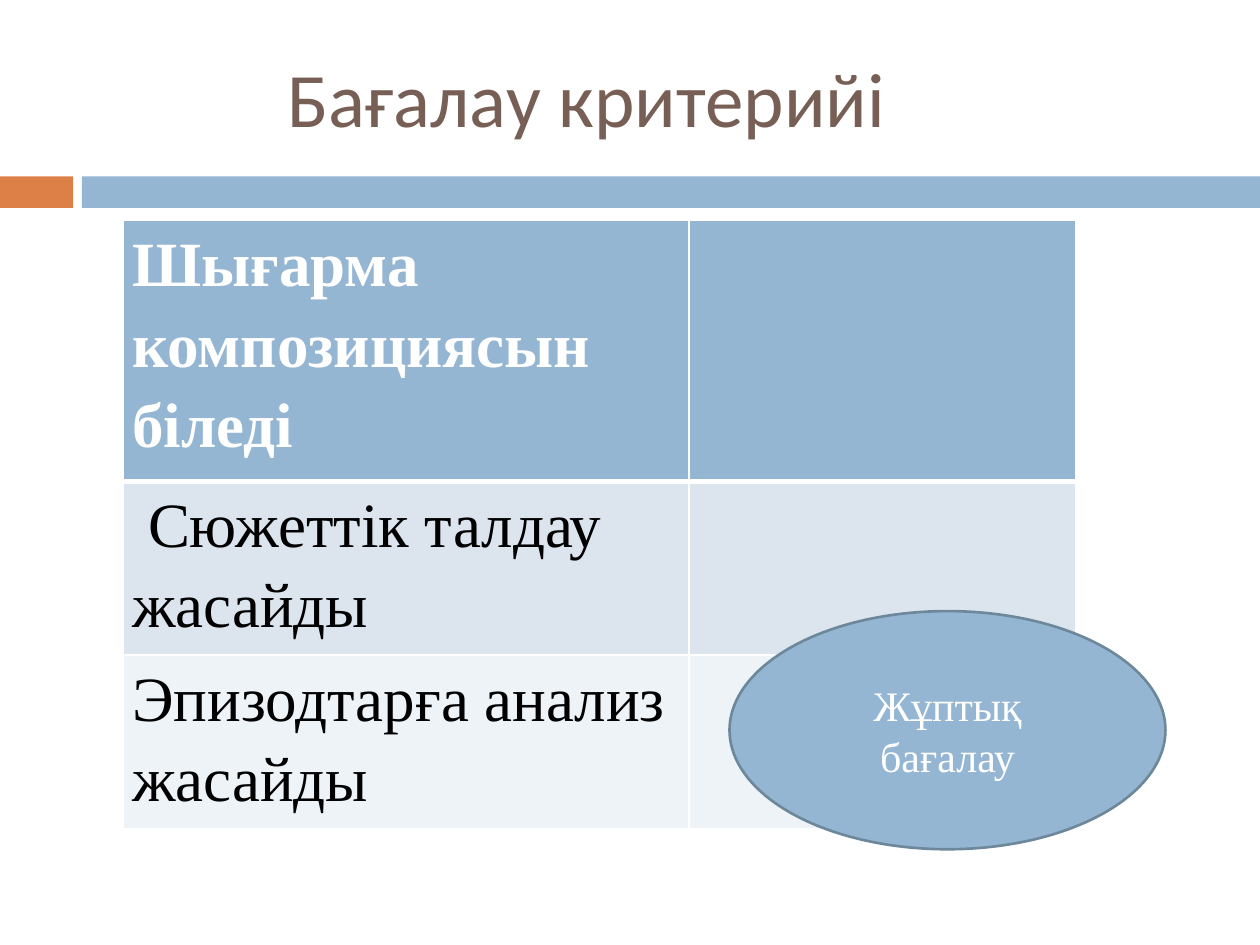
from lxml.etree import SubElement
from pptx import Presentation
from pptx.dml.color import RGBColor
from pptx.enum.shapes import MSO_SHAPE
from pptx.enum.text import MSO_ANCHOR, PP_ALIGN
from pptx.oxml.ns import qn
from pptx.util import Inches, Pt

BLUE, ORANGE, BROWN = "94B6D2", "DD8047", "775F55"
WHITE, BLACK, OUTLINE = "FFFFFF", "000000", "6D879B"
BAND_DARK, BAND_LIGHT = "DCE5EE", "EEF3F7"
SERIF, SANS = "Times New Roman", "Calibri"


def color(hex_string):
    return RGBColor.from_string(hex_string)


def write(frame, text, size=24, font=SERIF, fill=WHITE, bold=False,
          align=PP_ALIGN.LEFT, spacing=None):
    frame.word_wrap = True
    para = frame.paragraphs[0]
    para.alignment = align
    if spacing:
        para.line_spacing = spacing
    span = para.add_run()
    span.text = text
    span.font.size = Pt(size)
    span.font.name = font
    span.font.bold = bold
    span.font.color.rgb = color(fill)


def set_borders(cell, bottom_width):
    properties = cell._tc.get_or_add_tcPr()
    widths = {"a:lnL": 1, "a:lnR": 1, "a:lnT": 1, "a:lnB": bottom_width}
    for position, (side, width) in enumerate(widths.items()):
        line = SubElement(properties, qn(side), w=str(Pt(width)))
        solid = SubElement(line, qn("a:solidFill"))
        SubElement(solid, qn("a:srgbClr"), val=WHITE)
        properties.insert(position, line)


class SlideBuilder:
    def __init__(self, page):
        self.page = page

    def shape(self, kind, left, top, width, height, fill, outline=None):
        shape = self.page.shapes.add_shape(
            kind, Inches(left), Inches(top), Inches(width), Inches(height))
        shape.shadow.inherit = False
        shape.fill.solid()
        shape.fill.fore_color.rgb = color(fill)
        if outline:
            shape.line.color.rgb = color(outline)
            shape.line.width = Pt(1.5)
        else:
            shape.line.fill.background()
        return shape

    def title(self, text, left, top, width, height):
        box = self.page.shapes.add_textbox(
            Inches(left), Inches(top), Inches(width), Inches(height))
        box.text_frame.vertical_anchor = MSO_ANCHOR.MIDDLE
        write(box.text_frame, text, size=44, font=SANS, fill=BROWN,
              align=PP_ALIGN.CENTER)

    def criteria_table(self, left, top, columns, rows):
        height = sum(row_height for _, row_height, _ in rows)
        table = self.page.shapes.add_table(
            len(rows), len(columns), Inches(left), Inches(top),
            Inches(sum(columns)), Inches(height)).table
        for column, width in zip(table.columns, columns):
            column.width = Inches(width)
        for index, (text, row_height, fill) in enumerate(rows):
            header = index == 0
            table.rows[index].height = Inches(row_height)
            for cell in table.rows[index].cells:
                cell.fill.solid()
                cell.fill.fore_color.rgb = color(fill)
                set_borders(cell, bottom_width=3 if header else 1)
            cell = table.cell(index, 0)
            cell.margin_left = cell.margin_right = Inches(0.07)
            cell.margin_top = cell.margin_bottom = 0
            write(cell.text_frame, text, size=36, bold=header,
                  fill=WHITE if header else BLACK, spacing=1.15)


def main():
    deck = Presentation()
    deck.slide_width, deck.slide_height = Inches(10), Inches(7.5)
    builder = SlideBuilder(deck.slides.add_slide(deck.slide_layouts[6]))

    # Divider bars and title
    builder.shape(MSO_SHAPE.RECTANGLE, 0, 1.4, 0.58, 0.25, ORANGE)
    builder.shape(MSO_SHAPE.RECTANGLE, 0.65, 1.4, 9.35, 0.25, BLUE)
    builder.title(" Бағалау критерийі", 0.5, 0.3, 8.17, 0.93)

    # Assessment criteria
    builder.criteria_table(0.98, 1.75, [4.49, 3.07], [
        ("Шығарма композициясын біледі", 1.9, BLUE),
        (" Сюжеттік талдау жасайды", 1.27, BAND_DARK),
        ("Эпизодтарға анализ жасайды", 1.27, BAND_LIGHT),
    ])

    # Assessment method
    method = builder.shape(MSO_SHAPE.OVAL, 5.79, 4.85, 3.46, 1.89, BLUE, OUTLINE)
    method.text_frame.vertical_anchor = MSO_ANCHOR.MIDDLE
    write(method.text_frame, "Жұптық бағалау", align=PP_ALIGN.CENTER)

    deck.save("out.pptx")


if __name__ == "__main__":
    main()
